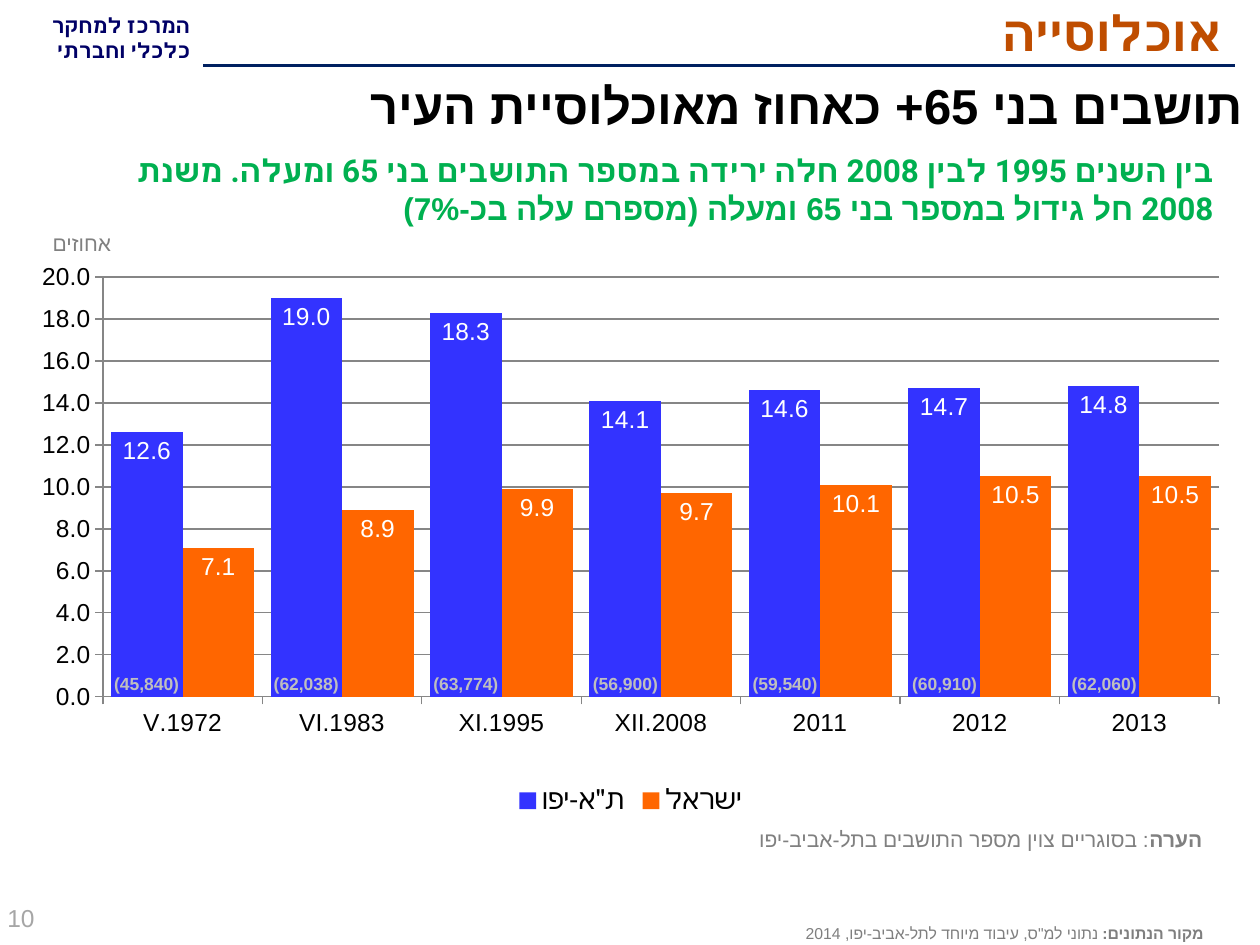
from dataclasses import dataclass

from lxml import etree
from pptx import Presentation
from pptx.chart.data import CategoryChartData
from pptx.dml.color import RGBColor
from pptx.enum.chart import XL_CHART_TYPE, XL_LABEL_POSITION, XL_LEGEND_POSITION, XL_TICK_MARK
from pptx.enum.shapes import MSO_CONNECTOR
from pptx.enum.text import MSO_ANCHOR, MSO_AUTO_SIZE, PP_ALIGN
from pptx.oxml import parse_xml
from pptx.oxml.ns import nsdecls, qn
from pptx.util import Inches, Pt


@dataclass(frozen=True)
class Theme:
    heading_font: str = "Roboto"
    body_font: str = "Arial"
    title: str = "BF4D00"
    logo_text: str = "000066"
    rule: str = "002060"
    message: str = "00B050"
    black: str = "000000"
    white: str = "FFFFFF"
    source: str = "7F7F7F"
    note: str = "808080"
    count: str = "BFBFBF"
    page: str = "A6A6A6"
    axis: str = "868686"
    city: str = "3333FF"
    country: str = "FF6600"
    title_size: int = 28
    message_size: int = 18
    legend_size: int = 16
    chart_size: int = 14
    note_size: int = 12
    count_size: int = 10
    source_size: int = 9


THEME = Theme()
PERIODS = ["V.1972", "VI.1983", "XI.1995", "XII.2008", "2011", "2012", "2013"]
CITY_SHARE = [12.6, 19.0, 18.3, 14.1, 14.6, 14.7, 14.8]
COUNTRY_SHARE = [7.1, 8.9, 9.9, 9.7, 10.1, 10.5, 10.5]
RESIDENTS = [45840, 62038, 63774, 56900, 59540, 60910, 62060]


def color(value):
    return RGBColor.from_string(value)


def format_font(font, size, value, bold=False, name=THEME.body_font):
    font.size = Pt(size)
    font.bold = bold
    font.name = name
    font.color.rgb = color(value)


def write_text(shape, lines, size, value, bold=False, name=THEME.body_font,
               align=PP_ALIGN.RIGHT, anchor=MSO_ANCHOR.TOP):
    """Fill a shape with right-to-left lines; each line is text or (text, bold, font) runs."""
    frame = shape.text_frame
    frame.word_wrap = True
    frame.auto_size = MSO_AUTO_SIZE.NONE
    frame.vertical_anchor = anchor
    for index, line in enumerate(lines):
        paragraph = frame.add_paragraph() if index else frame.paragraphs[0]
        paragraph.alignment = align
        paragraph._p.get_or_add_pPr().set("rtl", "1")
        runs = [(line, bold, name)] if isinstance(line, str) else line
        for text, run_bold, run_font in runs:
            run = paragraph.add_run()
            run.text = text
            format_font(run.font, size, value, run_bold, run_font)
            # Hebrew takes its typeface from the complex-script font
            complex_font = etree.SubElement(run.font._element, qn("a:cs"))
            complex_font.set("typeface", run_font)


def place(shape, left, top, width, height):
    shape.left, shape.top = Inches(left), Inches(top)
    shape.width, shape.height = Inches(width), Inches(height)


def add_text(slide, box, lines, size, value, **text_format):
    shape = slide.shapes.add_textbox(*map(Inches, box))
    write_text(shape, lines, size, value, **text_format)
    return shape


def add_rule(slide, left, right, top):
    line = slide.shapes.add_connector(
        MSO_CONNECTOR.STRAIGHT, Inches(right), Inches(top), Inches(left), Inches(top))
    line.line.color.rgb = color(THEME.rule)
    line.line.width = Pt(2.25)
    etree.SubElement(line._element.spPr, qn("a:effectLst"))


def format_axis(axis):
    axis.major_tick_mark = XL_TICK_MARK.OUTSIDE
    axis.minor_tick_mark = XL_TICK_MARK.NONE
    axis.format.line.color.rgb = color(THEME.axis)
    format_font(axis.tick_labels.font, THEME.chart_size, THEME.black)


def format_series(series, value):
    series.format.fill.solid()
    series.format.fill.fore_color.rgb = color(value)
    labels = series.data_labels
    labels.show_value = True
    labels.position = XL_LABEL_POSITION.INSIDE_END
    labels.number_format = "0.0"
    labels.number_format_is_linked = False
    format_font(labels.font, THEME.chart_size, THEME.white)


def set_plot_area(chart, left, top, width, height):
    plot_area = chart._chartSpace.chart.plotArea
    for old_layout in plot_area.findall(qn("c:layout")):
        plot_area.remove(old_layout)
    plot_area.insert(0, parse_xml(
        f'<c:layout {nsdecls("c")}><c:manualLayout><c:layoutTarget val="inner"/>'
        '<c:xMode val="edge"/><c:yMode val="edge"/>'
        f'<c:x val="{left}"/><c:y val="{top}"/><c:w val="{width}"/><c:h val="{height}"/>'
        '</c:manualLayout></c:layout>'))


def add_share_chart(slide, box):
    data = CategoryChartData(number_format="0.0")
    data.categories = PERIODS
    data.add_series('ת"א-יפו', CITY_SHARE)
    data.add_series("ישראל", COUNTRY_SHARE)
    chart = slide.shapes.add_chart(
        XL_CHART_TYPE.COLUMN_CLUSTERED, *map(Inches, box), data).chart
    chart.has_title = False
    format_font(chart.font, THEME.message_size, THEME.black)
    set_plot_area(chart, 0.066, 0.04, 0.918, 0.742)

    plot = chart.plots[0]
    plot.gap_width = 23
    plot.overlap = 0
    plot.vary_by_categories = False
    for series, value in zip(plot.series, (THEME.city, THEME.country)):
        format_series(series, value)

    format_axis(chart.category_axis)
    value_axis = chart.value_axis
    format_axis(value_axis)
    value_axis.minimum_scale, value_axis.maximum_scale = 0, 20
    value_axis.major_unit = 2
    value_axis.tick_labels.number_format = "0.0"
    value_axis.tick_labels.number_format_is_linked = False
    value_axis.major_gridlines.format.line.color.rgb = color(THEME.axis)

    chart.has_legend = True
    chart.legend.position = XL_LEGEND_POSITION.BOTTOM
    chart.legend.include_in_layout = False
    format_font(chart.legend.font, THEME.legend_size, THEME.black)


def add_resident_counts(slide):
    first_left, last_left = 0.66, 8.26
    step = (last_left - first_left) / (len(RESIDENTS) - 1)
    for index, count in enumerate(RESIDENTS):
        add_text(slide, (first_left + index * step, 5.29, 0.86, 0.27), [f"({count:,})"],
                 THEME.count_size, THEME.count, bold=True)


def main():
    presentation = Presentation()
    presentation.slide_width, presentation.slide_height = Inches(10), Inches(7.5)
    slide = presentation.slides.add_slide(presentation.slide_layouts[5])

    # Header band
    center_name = add_text(slide, (-0.15, 0.05, 1.81, 0.51), ["המרכז למחקר", "כלכלי וחברתי"],
                           THEME.note_size, THEME.logo_text, bold=True, name=THEME.heading_font)
    center_name.text_frame.margin_right = Inches(0.15)
    add_rule(slide, 1.61, 9.8, 0.52)
    title = slide.shapes.title
    place(title, 1.58, -0.03, 8.22, 0.55)
    write_text(title, ["אוכלוסייה"], THEME.title_size, THEME.title,
               bold=True, name=THEME.heading_font)

    # Headline and message
    add_text(slide, (0.25, 0.55, 9.71, 0.6), ["תושבים בני 65+ כאחוז מאוכלוסיית העיר"],
             THEME.title_size, THEME.black, bold=True)
    message = [
        ("בין השנים 1995 לבין 2008 חלה ירידה במספר התושבים בני 65 ומעלה. משנת 2008 ",
         True, THEME.heading_font),
        ("חל גידול במספר בני 65 ומעלה (מספרם עלה בכ-7%)", True, THEME.body_font)]
    add_text(slide, (0.91, 1.15, 8.82, 0.78), [message], THEME.message_size, THEME.message)

    # Chart with resident counts at the foot of the city columns
    add_share_chart(slide, (0.18, 2.02, 9.65, 4.49))
    add_resident_counts(slide)
    add_text(slide, (-0.12, 1.78, 1.54, 0.3), ["אחוזים"], THEME.note_size, THEME.note,
             align=PP_ALIGN.CENTER)

    # Note, source and page number
    note = [("הערה", True, THEME.body_font),
            (": בסוגריים צוין מספר התושבים בתל-אביב-יפו", False, THEME.body_font)]
    add_text(slide, (5.85, 6.51, 3.79, 0.3), [note], THEME.note_size, THEME.note)
    source = [("מקור הנתונים: ", True, THEME.body_font),
              ('נתוני למ"ס, עיבוד מיוחד לתל-אביב-יפו, 2014', False, THEME.body_font)]
    add_text(slide, (2.17, 7.29, 7.48, 0.24), [source], THEME.source_size, THEME.source,
             anchor=MSO_ANCHOR.MIDDLE)
    add_text(slide, (-0.04, 7.06, 2.33, 0.44), ["10"], THEME.chart_size, THEME.page,
             align=PP_ALIGN.LEFT, anchor=MSO_ANCHOR.MIDDLE)

    presentation.save("out.pptx")


if __name__ == "__main__":
    main()
